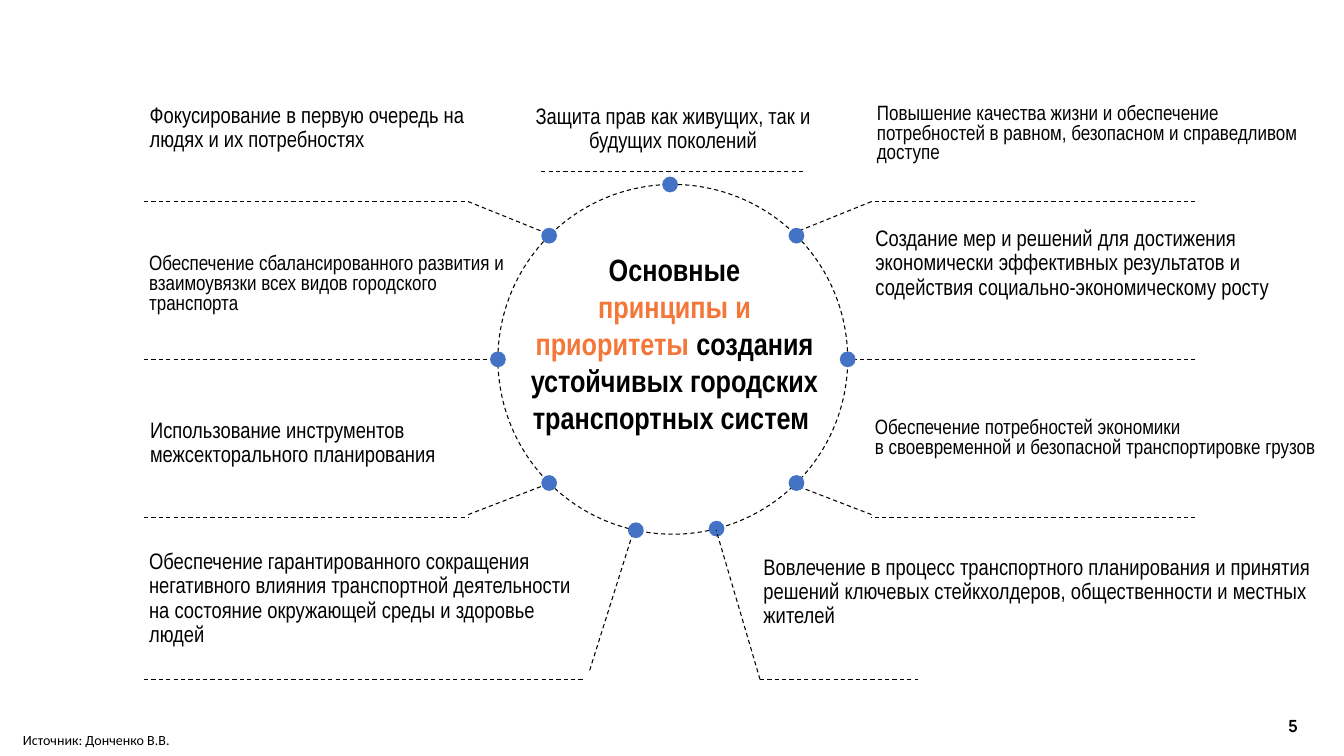
import math

from lxml import etree
from pptx import Presentation
from pptx import util as u
from pptx.dml.color import RGBColor
from pptx.enum import dml, shapes, text
from pptx.oxml.ns import qn

BLACK = RGBColor(0x00, 0x00, 0x00)
BLUE = RGBColor(0x44, 0x72, 0xC4)
ORANGE = RGBColor(0xF4, 0x76, 0x38)

WIDTH, HEIGHT = u.Inches(26.67), u.Inches(15)
COLS, ROWS = 80, 45

# Ring and leader geometry, in grid units
RING_X, RING_Y, RING_R = 40.05, 21.39, 10.41
AXIS = 39.87
DOT_R = 0.47
DOT_ANGLES = (0, 45, 75.5, 102.2, 135, 180, 225, 269.1, 315)

LARGE, SMALL = (32, 0.9), (29.6, 0.8)  # size, line spacing
LEFT, CENTER, RIGHT = text.PP_ALIGN.LEFT, text.PP_ALIGN.CENTER, text.PP_ALIGN.RIGHT

# left, top, width, style, alignment, wording
PRINCIPLES = (
    (8.61, 6.03, 20.07, LARGE, LEFT,
     "Фокусирование в первую очередь на людях и их потребностях"),
    (30.27, 6.12, 19.59, LARGE, CENTER,
     "Защита прав как живущих, так и будущих поколений"),
    (51.9, 6.06, 26.85, SMALL, LEFT,
     "Повышение качества жизни и обеспечение потребностей в равном, "
     "безопасном и справедливом доступе"),
    (8.58, 15, 22.2, SMALL, LEFT,
     "Обеспечение сбалансированного развития и взаимоувязки всех видов "
     "городского транспорта"),
    (51.81, 13.38, 26.85, LARGE, LEFT,
     "Создание мер и решений для достижения экономически эффективных "
     "результатов и содействия социально-экономическому росту"),
    (8.64, 24.78, 20.52, LARGE, LEFT,
     "Использование инструментов межсекторального планирования"),
    (51.78, 24.78, 27.09, SMALL, LEFT,
     "Обеспечение потребностей экономики \v"
     "в своевременной и безопасной транспортировке грузов"),
    (8.58, 32.61, 27.09, LARGE, LEFT,
     "Обеспечение гарантированного сокращения негативного влияния "
     "транспортной деятельности на состояние окружающей среды и здоровье людей"),
    (45.15, 32.94, 33.48, LARGE, LEFT,
     "Вовлечение в процесс транспортного планирования и принятия решений "
     "ключевых стейкхолдеров, общественности и местных жителей"),
)


class Canvas:
    """Draws on one slide; all lengths are columns and rows of the grid."""

    font = "Arial Narrow"
    line_width = u.Pt(1.5)

    def __init__(self, slide):
        self.slide = slide

    def x(self, cols):
        return round(WIDTH * cols / COLS)

    def y(self, rows):
        return round(HEIGHT * rows / ROWS)

    def box(self, left, top, width, height):
        return self.x(left), self.y(top), self.x(width), self.y(height)

    def dash(self, line):
        line.color.rgb = BLACK
        line.width = self.line_width
        line.dash_style = dml.MSO_LINE.DASH

    def circle(self, cx, cy, r, fill=None):
        sp = self.slide.shapes.add_shape(
            shapes.MSO_SHAPE.OVAL, *self.box(cx - r, cy - r, 2 * r, 2 * r))
        sp.shadow.inherit = False
        if fill is None:
            sp.fill.background()
            self.dash(sp.line)
        else:
            sp.fill.solid()
            sp.fill.fore_color.rgb = fill
            sp.line.fill.background()

    def leader(self, x1, y1, x2, y2):
        line = self.slide.shapes.add_connector(
            shapes.MSO_CONNECTOR.STRAIGHT,
            self.x(x1), self.y(y1), self.x(x2), self.y(y2))
        self.dash(line.line)
        etree.SubElement(line._element.spPr, qn("a:effectLst"))

    def style(self, font, size, color=BLACK, bold=False, name=None):
        font.name = name or self.font
        font.size = u.Pt(size)
        font.bold = bold
        font.color.rgb = color

    def label(self, place, wording, size, spacing=1.0, align=LEFT,
              bold=False, name=None, wrap=True, anchor=text.MSO_ANCHOR.TOP):
        tf = self.slide.shapes.add_textbox(*self.box(*place)).text_frame
        tf.word_wrap = wrap
        tf.vertical_anchor = anchor
        tf.text = wording
        p = tf.paragraphs[0]
        p.alignment = align
        p.line_spacing = spacing
        for r in p.runs:
            self.style(r.font, size, bold=bold, name=name)

    def title(self, place, parts, size):
        sp = self.slide.shapes.title
        sp.left, sp.top, sp.width, sp.height = self.box(*place)
        tf = sp.text_frame
        tf.word_wrap = True
        tf.auto_size = text.MSO_AUTO_SIZE.NONE
        tf.vertical_anchor = text.MSO_ANCHOR.TOP
        p = tf.paragraphs[0]
        p.alignment = CENTER
        for wording, color, breaks in parts:
            r = p.add_run()
            r.text = wording
            self.style(r.font, size, color, bold=True)
            if breaks:
                p.add_line_break()


def main():
    prs = Presentation()
    prs.slide_width, prs.slide_height = WIDTH, HEIGHT
    c = Canvas(prs.slides.add_slide(prs.slide_layouts[5]))

    # Ring with the title inside
    c.circle(RING_X, RING_Y, RING_R)
    c.title((31.11, 14.79, 18.09, 11.4), (
        ("Основные", BLACK, True),
        ("принципы и приоритеты ", ORANGE, False),
        ("создания устойчивых городских транспортных систем ", BLACK, False),
    ), 44)

    # Leaders mirrored on both sides of the ring
    for side in (-1, 1):
        outer, elbow, inner = (AXIS + side * d for d in (31.29, 12, 7.17))
        c.leader(outer, 12, elbow, 12)
        c.leader(elbow, 12, inner, 13.95)
        c.leader(outer, 21.39, AXIS + side * 10.23, 21.39)
        c.leader(outer, 30.81, elbow, 30.81)
        c.leader(elbow, 30.63, inner, 28.77)

    # Leaders above and below the ring
    c.leader(32.22, 10.23, 47.94, 10.23)
    c.leader(8.58, 40.44, 34.8, 40.44)
    c.leader(35.1, 39.9, 37.8, 31.32)

    # Dots on the ring
    for angle in map(math.radians, DOT_ANGLES):
        c.circle(RING_X + RING_R * math.cos(angle),
                 RING_Y + RING_R * math.sin(angle), DOT_R, BLUE)

    # Lower right leader, in front of its dot
    c.leader(45.24, 40.44, 42.63, 31.56)
    c.leader(45.24, 40.44, 54.66, 40.44)

    # Principles
    for left, top, width, (size, spacing), align, wording in PRINCIPLES:
        c.label((left, top, width, 4.17), wording, size, spacing, align)

    # Source and page number
    c.label((1.02, 43.41, 9.42, 1.32), "Источник: Донченко В.В.", 20,
            align=CENTER, name="Calibri", wrap=False)
    c.label((74.49, 42, 3.06, 2.4), "5", 24, align=RIGHT, bold=True,
            name="Manrope", anchor=text.MSO_ANCHOR.MIDDLE)

    prs.save("out.pptx")


if __name__ == "__main__":
    main()
